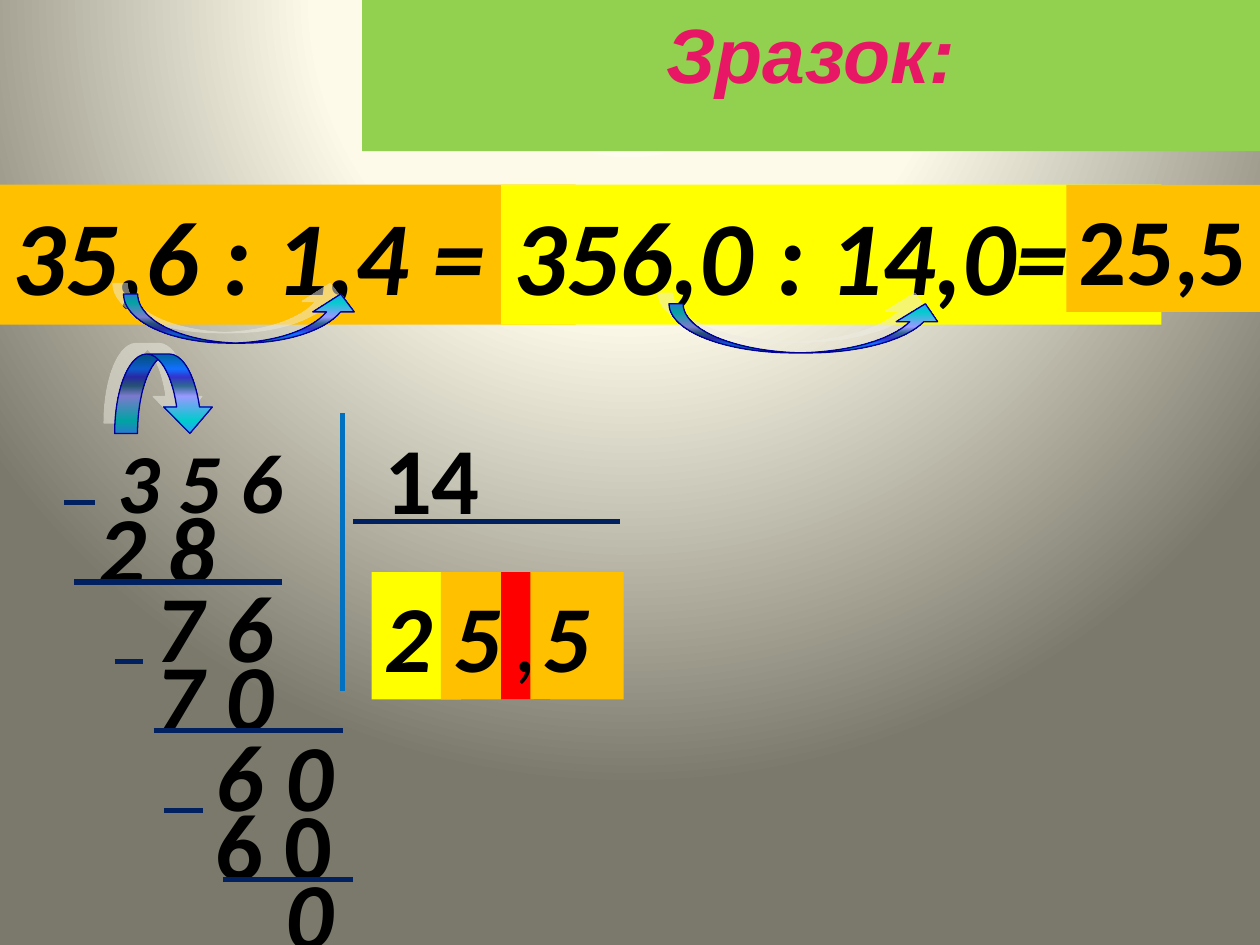
import dataclasses
import pptx
import pptx.dml.color
import pptx.enum.dml
import pptx.enum.shapes
import pptx.enum.text
import pptx.oxml
import pptx.oxml.ns
import pptx.util

Pt = pptx.util.Pt
SHAPES = pptx.enum.shapes.MSO_SHAPE
TEXT = pptx.enum.text
NAMESPACE = pptx.oxml.ns.nsdecls("a")


@dataclasses.dataclass(frozen=True)
class Theme:
    orange: str = "FFC000"
    yellow: str = "FFFF00"
    red: str = "FF0000"
    green: str = "92D050"
    ink: str = "000000"
    navy: str = "002060"
    blue: str = "0070C0"
    arrow_line: str = "000099"
    arrow_shadow: str = "EEECE1"
    title_outline: str = "EAEAEA"
    background: tuple = ((0, "FEFCEE"), (40, "FDFAEA"), (100, "7B796B"))
    rainbow: tuple = ((0, "A603AB"), (12, "E81766"), (27, "EE3F17"), (48, "FFFF00"),
                      (65, "1A8D48"), (79, "0819FB"), (100, "A603AB"))
    ocean: tuple = ((0, "006699"), (19, "1170FF"), (29, "3333CC"), (40, "2E6792"),
                    (53, "9999FF"), (84, "00CCCC"), (100, "3399FF"))
    title_font: str = "Arial"
    body_font: str = "Calibri"
    title_size: int = 44
    equation_size: int = 60
    digit_size: int = 54
    dividend_size: int = 48


def color(value):
    return pptx.dml.color.RGBColor.from_string(value)


def set_values(target, values):
    for name, value in values.items():
        setattr(target, name, value)


def set_gradient(fill, owner, stops, direction):
    """Fill with any number of stops; direction is a:lin or a:path markup."""
    fill.gradient()
    old = owner.xpath(".//a:gradFill")[0]
    marks = "".join(f'<a:gs pos="{position * 1000}"><a:srgbClr val="{value}"/></a:gs>'
                    for position, value in stops)
    old.getparent().replace(old, pptx.oxml.parse_xml(
        f'<a:gradFill {NAMESPACE} rotWithShape="1"><a:gsLst>{marks}</a:gsLst>'
        f'{direction}</a:gradFill>'))


class SlideBuilder:
    def __init__(self, presentation, theme):
        self.theme = theme
        self.slide = presentation.slides.add_slide(presentation.slide_layouts[5])

    def background(self):
        set_gradient(self.slide.background.fill, self.slide.element, self.theme.background,
                     '<a:path path="circle"><a:fillToRect l="50000" t="-80000" '
                     'r="50000" b="180000"/></a:path>')

    def title(self, text, left, top, width, height):
        theme, shape = self.theme, self.slide.shapes.title
        set_values(shape, dict(left=Pt(left), top=Pt(top), width=Pt(width), height=Pt(height)))
        self.solid(shape, theme.green)
        set_values(shape.text_frame, dict(
            word_wrap=False, auto_size=TEXT.MSO_AUTO_SIZE.NONE,
            vertical_anchor=TEXT.MSO_ANCHOR.TOP))
        paragraph = shape.text_frame.paragraphs[0]
        paragraph.alignment = TEXT.PP_ALIGN.CENTER
        run = paragraph.add_run()
        run.text = text
        set_values(run.font, dict(name=theme.title_font, size=Pt(theme.title_size),
                                  bold=True, italic=True))
        properties = paragraph._p.xpath("./a:r/a:rPr")[0]
        set_gradient(run.font.fill, properties, theme.rainbow, '<a:lin ang="0" scaled="1"/>')
        properties.insert(0, pptx.oxml.parse_xml(
            f'<a:ln {NAMESPACE} w="{Pt(1)}"><a:solidFill>'
            f'<a:srgbClr val="{theme.title_outline}"/></a:solidFill></a:ln>'))

    def solid(self, shape, value):
        shape.fill.solid()
        shape.fill.fore_color.rgb = color(value)

    def label(self, text, left, top, width, height=72.7, fill=None, size=None,
              bold=True, italic=True, wrap=True, inset=7.2):
        """Digits, on a coloured card when a fill is given."""
        box = [Pt(value) for value in (left, top, width, height)]
        if fill:
            shape = self.slide.shapes.add_shape(SHAPES.RECTANGLE, *box)
            shape.shadow.inherit = False
            shape.line.fill.background()
            self.solid(shape, fill)
        else:
            shape = self.slide.shapes.add_textbox(*box)
        set_values(shape.text_frame, dict(
            word_wrap=wrap, auto_size=TEXT.MSO_AUTO_SIZE.SHAPE_TO_FIT_TEXT,
            vertical_anchor=TEXT.MSO_ANCHOR.TOP, margin_left=Pt(inset)))
        paragraph = shape.text_frame.paragraphs[0]
        paragraph.alignment = TEXT.PP_ALIGN.LEFT
        run = paragraph.add_run()
        run.text = text
        set_values(run.font, dict(name=self.theme.body_font, bold=bold, italic=italic,
                                  size=Pt(size or self.theme.digit_size)))
        run.font.color.rgb = color(self.theme.ink)

    def curved_arrow(self, left, top, width, height, adjustments, flipped=False):
        theme = self.theme
        shape = self.slide.shapes.add_shape(
            SHAPES.CURVED_DOWN_ARROW, Pt(left), Pt(top), Pt(width), Pt(height))
        for index, value in enumerate(adjustments):
            shape.adjustments[index] = value
        properties = shape.element.spPr
        if flipped:
            properties.xfrm.set("flipV", "1")
        set_gradient(shape.fill, properties, theme.ocean, '<a:lin ang="5400000" scaled="1"/>')
        shape.line.color.rgb = color(theme.arrow_line)
        shape.line.width = Pt(0.75)
        shape.shadow.inherit = False
        properties.xpath("./a:effectLst")[0].append(pptx.oxml.parse_xml(
            f'<a:outerShdw {NAMESPACE} dist="{Pt(8.5)}" dir="13500000" algn="ctr" '
            f'rotWithShape="0"><a:srgbClr val="{theme.arrow_shadow}">'
            f'<a:alpha val="50000"/></a:srgbClr></a:outerShdw>'))

    def line(self, x1, y1, x2, y2, value):
        connector = self.slide.shapes.add_connector(
            pptx.enum.shapes.MSO_CONNECTOR.STRAIGHT, Pt(x1), Pt(y1), Pt(x2), Pt(y2))
        connector.line.color.rgb = color(value)
        connector.line.width = Pt(3)
        connector.element.spPr.append(pptx.oxml.parse_xml(f"<a:effectLst {NAMESPACE}/>"))


def main():
    presentation = pptx.Presentation()
    set_values(presentation, dict(slide_width=Pt(720), slide_height=Pt(540)))
    theme = Theme()
    builder = SlideBuilder(presentation, theme)
    builder.background()
    builder.title("Зразок:", 206.9, 0, 513.1, 86.4)

    # Equation, with an arrow under each moved decimal comma
    equation_top, shift = 105.6, (0.288, 0.844, 0.364)
    equation = dict(top=equation_top, height=80, size=theme.equation_size)
    builder.label("35,6 : 1,4 =", 0, width=329, fill=theme.orange, **equation)
    builder.curved_arrow(70.6, 168, 136, 28.1, shift, flipped=True)
    builder.label("356,0 : 14,0=", 286.4, width=377.3, fill=theme.yellow, **equation)
    builder.curved_arrow(382.3, 173.6, 158.4, 28.1, shift, flipped=True)
    builder.label("25,5", 609.3, equation_top, 110.7, fill=theme.orange, italic=False)

    # Dividend, divisor and the division corner
    builder.label("3 5 6", 59.8, 242, 118.8, 65.5, size=theme.dividend_size)
    builder.label("14", 212.4, 236.2, 69.8, italic=False)
    builder.line(195.8, 236.2, 195.8, 394.6, theme.blue)
    builder.line(201.6, 298.1, 354.2, 298.1, theme.navy)
    builder.curved_arrow(65.5, 202.3, 56.9, 45.4, (0.288, 0.611, 0.333))

    # Quotient cards, overlapping from left to right
    for text, left, width, fill in (("2", 212.4, 51.1, theme.yellow),
                                    ("5", 252, 53.3, theme.orange)):
        builder.label(text, left, 326.9, width, fill=fill)
    builder.label(",", 286.4, 326.9, 28, fill=theme.red, bold=False, italic=False, wrap=False)
    builder.label("5", 303.1, 326.9, 53.3, fill=theme.orange)

    # Long division steps: text, left, top, width
    step, first_top, second_top = 85, 321, 360.7
    builder.label("2 8", 36.7, 275.8, 108, inset=19.4)
    for text, left, top, width in (
            ("7", 82, first_top, 53.3), ("6", 121.7, first_top, 65.5),
            ("7 0", 82, second_top, 85),
            ("6", 115.9, first_top + step, 83.5), ("0", 156.2, first_top + step, 44.6),
            ("0", 156.2, first_top + 2 * step - 5.8, 56.2)):
        builder.label(text, left, top, width)
    builder.label("6 0", 115.9, second_top + step, 87.8, italic=False)

    # Minus signs and subtraction lines
    for left, right, y in ((36.7, 54, 287.3), (65.5, 82, 378), (93.6, 115.9, 463)):
        builder.line(left, y, right, y, theme.navy)
    for row, (left, right) in enumerate(((42.5, 161.3), (87.8, 195.8), (127.4, 201.6))):
        y = 332.6 + row * step
        builder.line(left, y, right, y, theme.navy)

    presentation.save("out.pptx")


if __name__ == "__main__":
    main()
